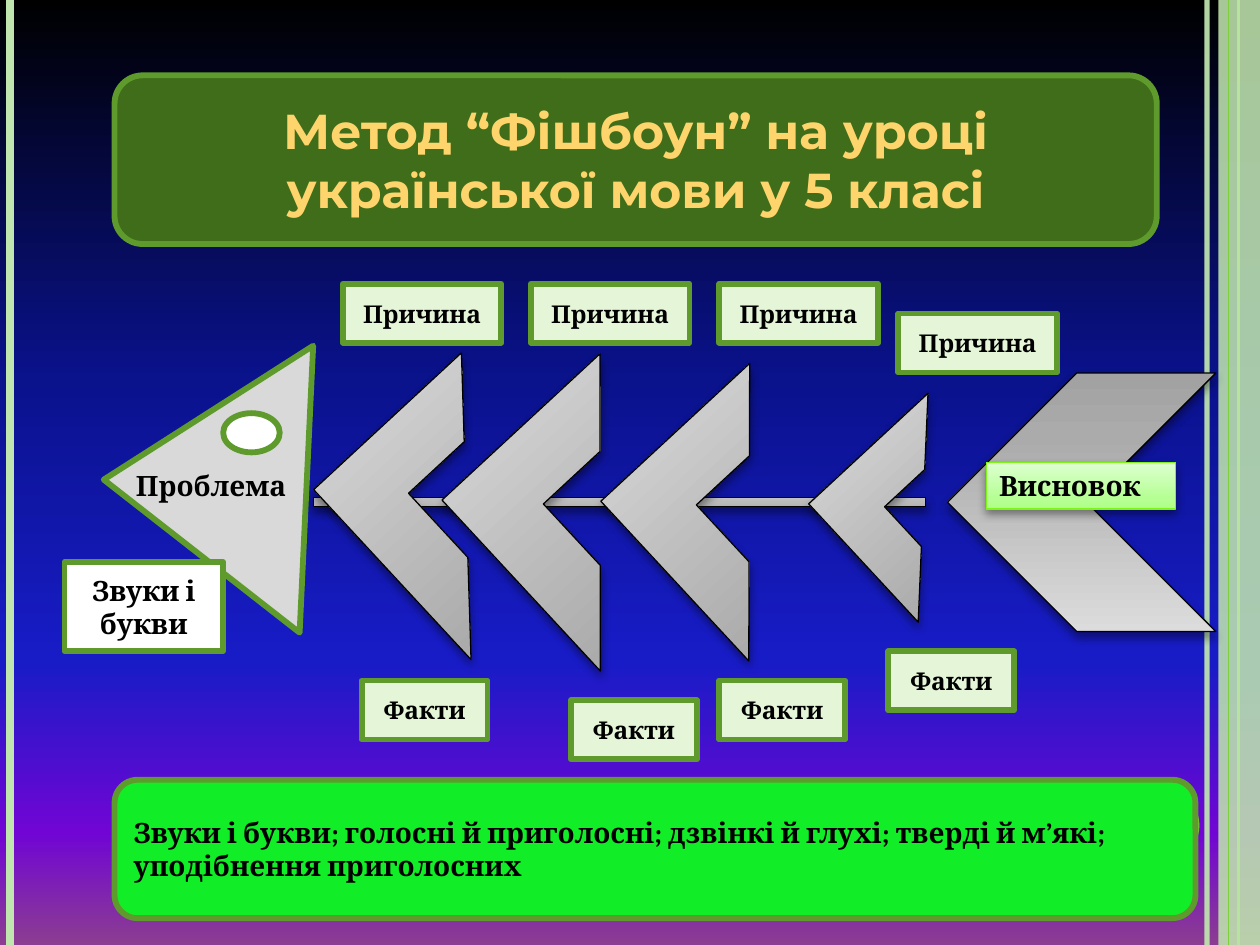
"""Build a fishbone diagram slide for a Ukrainian language lesson."""
import pptx
import pptx.dml.color
import pptx.enum.shapes
import pptx.enum.text
import pptx.oxml
import pptx.oxml.ns
import pptx.util
from lxml import etree

Cm, Pt = pptx.util.Cm, pptx.util.Pt
qn = pptx.oxml.ns.qn
SHAPE = pptx.enum.shapes.MSO_SHAPE
ALIGN = pptx.enum.text.PP_ALIGN
ANCHOR = pptx.enum.text.MSO_ANCHOR

COLORS = {
    "black": "000000", "white": "FFFFFF", "gold": "FED46C", "olive": "3F6D19",
    "edge": "5E9B2C", "head": "D9D9D9", "label": "E5F6D8", "bright": "11ED26",
    "lime": "7BF616", "stripe": "C0E5AF", "leaf": "7FD13B",
}
NIGHT = [(0, "000000"), (40, "0A128C"), (70, "181CC7"), (88, "7005D4"), (100, "8C3D91")]
STEEL = [(0, "A2A2A2"), (25, "ABABAB"), (100, "DCDCDC")]
MINT = [(0, "AFFF89"), (25, "B6FF95"), (100, "DEFFD1")]

WIDTH, HEIGHT = 25.4, 19.05
STRIPES = [(24.33, "stripe", 3, 93), (0.2, "stripe", 4.5, 100), (24.97, "leaf", 1.5, 100)]
THIN_STRIPE = (24.77, "leaf", 0.75, 100)
TITLE = "Метод “Фішбоун” на уроці української мови у 5 класі"
SUMMARY = "Звуки і букви; голосні й приголосні; дзвінкі й глухі; тверді й м’які; уподібнення приголосних"
RIBS = [(7.37, 7.87, 4.06, 4.67), (9.93, 7.98, 4.34, 4.7),
        (13.06, 8.13, 4.09, 4.39), (16.97, 8.61, 3.28, 3.25)]
LABELS = [
    ("Причина", 3.2, [(6.91, 5.72), (10.7, 5.72), (14.5, 5.72), (18.11, 6.32)]),
    ("Факти", 2.54, [(7.29, 13.72), (11.51, 14.12), (14.5, 13.72), (17.91, 13.13)]),
]
LABEL_HEIGHT = 1.19


def rgb(name):
    return pptx.dml.color.RGBColor.from_string(COLORS[name])


def set_alpha(element, percent):
    color = element.find(".//" + qn("a:srgbClr"))
    etree.SubElement(color, qn("a:alpha")).set("val", str(percent * 1000))


def set_gradient(fill, element, stops, angle):
    fill.gradient()
    fill.gradient_angle = angle
    stop_list = element.find(".//" + qn("a:gsLst"))
    for old in list(stop_list):
        stop_list.remove(old)
    for position, color in stops:
        stop = etree.SubElement(stop_list, qn("a:gs"), pos=str(position * 1000))
        etree.SubElement(stop, qn("a:srgbClr"), val=color)


def add_shadow(sp):
    effects = sp.element.spPr.find(qn("a:effectLst"))
    shadow = etree.SubElement(effects, qn("a:outerShdw"), blurRad=str(Pt(5.2)),
                              dist=str(Pt(3)), dir="5400000", rotWithShape="0")
    etree.SubElement(shadow, qn("a:srgbClr"), val=COLORS["black"])
    set_alpha(shadow, 40)


def add_shape(s, kind, box, fill, line="edge", width=3.35, rotation=0):
    sp = s.shapes.add_shape(kind, *map(Cm, box))
    sp.rotation = rotation
    sp.shadow.inherit = False
    if isinstance(fill, str):
        sp.fill.solid()
        sp.fill.fore_color.rgb = rgb(fill)
    else:
        set_gradient(sp.fill, sp.element.spPr, fill, 90)
        add_shadow(sp)
    if line:
        sp.line.color.rgb = rgb(line)
        sp.line.width = Pt(width)
    else:
        sp.line.fill.background()
    return sp


def write_text(sp, text, size=16, font="Cambria", color="black",
               align=ALIGN.CENTER, anchor=ANCHOR.MIDDLE):
    tf = sp.text_frame
    tf.word_wrap = True
    tf.vertical_anchor = anchor
    p = tf.paragraphs[0]
    p.alignment = align
    r = p.add_run()
    r.text = text
    r.font.size = Pt(size)
    r.font.name = font
    r.font.bold = True
    r.font.color.rgb = rgb(color)


def add_stripe(s, x, color, width, alpha):
    line = s.shapes.add_connector(pptx.enum.shapes.MSO_CONNECTOR.STRAIGHT,
                                  Cm(x), Cm(0), Cm(x), Cm(HEIGHT))
    line.line.color.rgb = rgb(color)
    line.line.width = Pt(width)
    if alpha < 100:
        set_alpha(line.element.spPr, alpha)
    etree.SubElement(line.element.spPr, qn("a:effectLst"))


def add_backdrop(s):
    set_gradient(s.background.fill, s.element, NIGHT, 270)
    for stripe in STRIPES:
        add_stripe(s, *stripe)
    band = add_shape(s, SHAPE.RECTANGLE, (24.56, 0, 0.84, HEIGHT), "stripe", line=None)
    set_alpha(band.element.spPr, 87)
    add_stripe(s, *THIN_STRIPE)
    add_shape(s, SHAPE.OVAL, (22.66, 15.88, 1.52, 1.52), "leaf", line=None)


def add_fish(s):
    add_shape(s, SHAPE.FLOWCHART_EXTRACT, (1.24, 7.72, 5.79, 4.09), "head", rotation=272.7)
    add_shape(s, SHAPE.OVAL, (4.5, 8.33, 1.14, 0.79), "white")
    problem = s.shapes.add_textbox(*map(Cm, (2.49, 9.32, 4.19, 0.94)))
    write_text(problem, "Проблема", align=ALIGN.LEFT, anchor=ANCHOR.TOP)

    bone = {"fill": STEEL, "line": "black", "width": 0.75}
    add_shape(s, SHAPE.MATH_MINUS, (4.09, 9.73, 16.79, 0.79), **bone)
    add_shape(s, SHAPE.CHEVRON, (19.1, 7.52, 5.41, 5.21), rotation=180, **bone)
    conclusion = add_shape(s, SHAPE.RECTANGLE, (19.89, 9.32, 3.81, 0.94), MINT, "lime", 0.75)
    write_text(conclusion, "Висновок", align=ALIGN.LEFT, anchor=ANCHOR.TOP)
    for box in RIBS:
        add_shape(s, SHAPE.HALF_FRAME, box, rotation=317.2, **bone)
    for text, width, places in LABELS:
        for x, y in places:
            label = add_shape(s, SHAPE.RECTANGLE, (x, y, width, LABEL_HEIGHT), "label")
            write_text(label, text, size=14)


def main():
    prs = pptx.Presentation()
    prs.slide_width, prs.slide_height = Cm(WIDTH), Cm(HEIGHT)
    s = prs.slides.add_slide(prs.slide_layouts[6])
    add_backdrop(s)
    title = add_shape(s, SHAPE.ROUNDED_RECTANGLE, (2.31, 1.52, 21.01, 3.4), "olive")
    write_text(title, TITLE, size=28, font="Montserrat", color="gold")
    add_fish(s)
    summary = add_shape(s, SHAPE.ROUNDED_RECTANGLE, (2.31, 15.72, 21.79, 2.79), "bright")
    write_text(summary, SUMMARY, align=ALIGN.LEFT)
    topic = add_shape(s, SHAPE.RECTANGLE, (1.3, 11.33, 3.2, 1.8), "white")
    write_text(topic, "Звуки і букви")
    prs.save("out.pptx")


if __name__ == "__main__":
    main()
